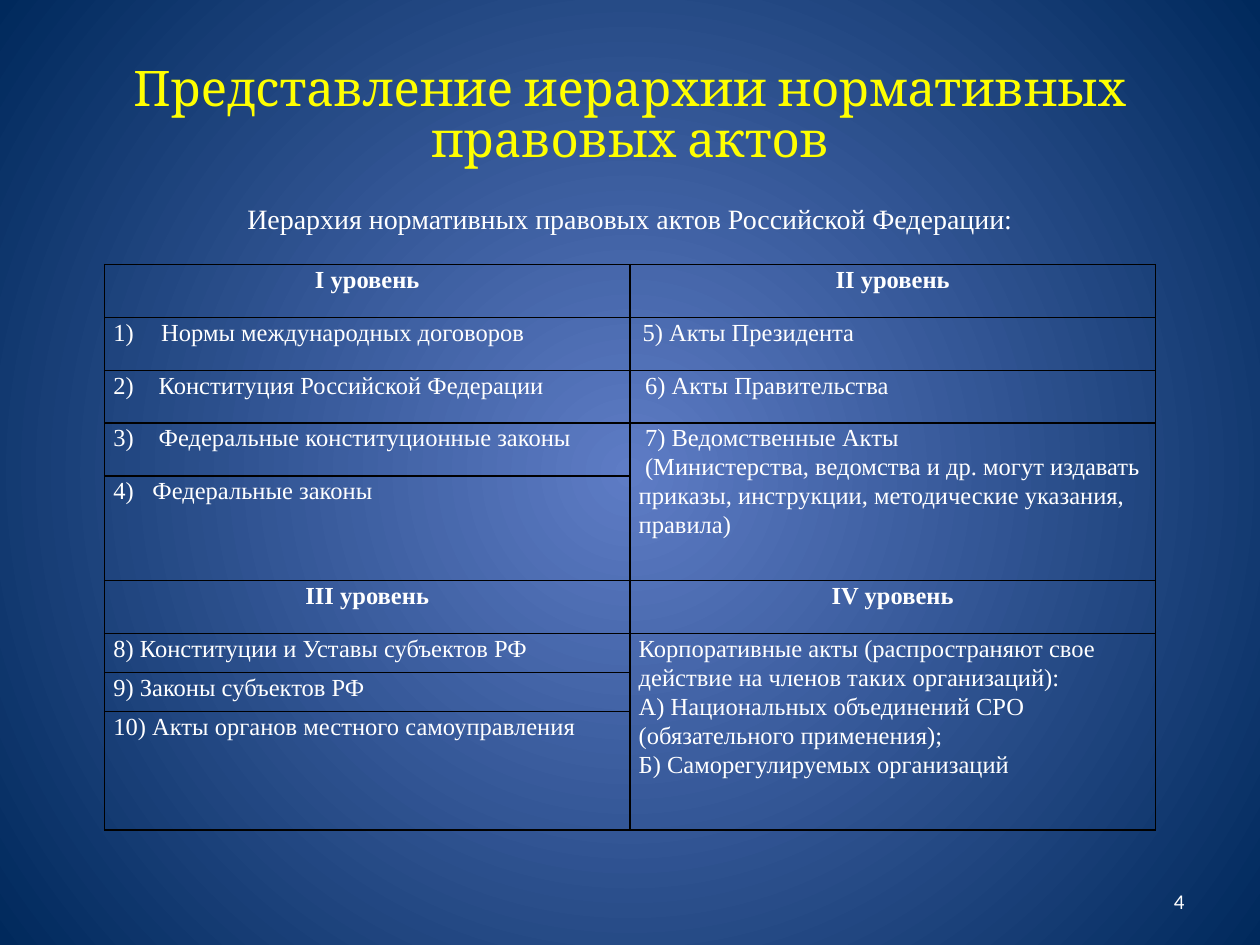
from lxml import etree
from pptx import Presentation, util as u
from pptx.dml.color import RGBColor
from pptx.enum import text
from pptx.oxml import parse_xml
from pptx.oxml.ns import nsdecls, qn

WIDTH, HEIGHT = 10, 7.5
SERIF = "Times New Roman"
WHITE = "FFFFFF"
LEFT, CENTER, RIGHT = text.PP_ALIGN.LEFT, text.PP_ALIGN.CENTER, text.PP_ALIGN.RIGHT

ROW_HEIGHTS = [0.42] * 4 + [0.83, 0.42, 0.31, 0.31, 0.94]
HEADINGS = {(0, 0): "I уровень", (0, 1): "II уровень",
            (5, 0): "III уровень", (5, 1): "IV уровень"}
# (row, column): paragraphs as (wording, left margin, first-line indent)
ACTS = {
    (1, 0): [("Нормы международных договоров", 0.38, -0.38)],
    (2, 0): [("2)\tКонституция Российской Федерации", 0.36, -0.36)],
    (3, 0): [("3)\tФедеральные конституционные законы", 0.36, -0.36)],
    (4, 0): [("4)\tФедеральные законы", 0.31, -0.31)],
    (6, 0): [("8) Конституции и Уставы субъектов РФ", 0, 0)],
    (7, 0): [("9) Законы субъектов РФ", 0, 0)],
    (8, 0): [("10) Акты органов местного самоуправления", 0, 0)],
    (1, 1): [("5) Акты Президента", 0.03, 0)],
    (2, 1): [("6) Акты Правительства", 0, 0.05)],
    (3, 1): [("7) Ведомственные Акты", 0, 0.05),
             ("(Министерства, ведомства и др. могут издавать приказы, "
              "инструкции, методические указания, правила)", 0, 0.05)],
    (6, 1): [("Корпоративные акты (распространяют свое действие на членов "
              "таких организаций):", 0, 0),
             ("А) Национальных объединений СРО (обязательного применения);", 0, 0),
             ("Б) Саморегулируемых организаций", 0, 0)],
}
MERGES = [(3, 4), (6, 8)]  # first and last rows joined in the right column


def rgb(value):
    return RGBColor.from_string(value)


def style(paragraph, size, font=SERIF, color=WHITE, align=LEFT, bold=False):
    paragraph.alignment = align
    paragraph.font.size = u.Pt(size)
    paragraph.font.name = font
    paragraph.font.color.rgb = rgb(color)
    paragraph.font.bold = bold


def paint_background(slide, center, edge):
    """Fill the slide with a gradient that spreads from its middle."""
    fill = slide.background.fill
    fill.gradient()
    for stop, color in zip(fill.gradient_stops, (center, edge)):
        stop.color.rgb = rgb(color)
    gradient = slide.element.find(".//" + qn("a:gradFill"))
    gradient.replace(gradient.find(qn("a:lin")), parse_xml(
        f'<a:path {nsdecls("a")} path="circle">'
        '<a:fillToRect l="50000" t="50000" r="50000" b="50000"/></a:path>'))


def add_title(slide, wording):
    title = slide.shapes.title
    title.left, title.top = u.Inches(0.05 * WIDTH), u.Inches(0.04 * HEIGHT)
    title.width, title.height = u.Inches(0.9 * WIDTH), u.Inches(1.25)
    frame = title.text_frame
    frame.text = wording
    frame.auto_size = text.MSO_AUTO_SIZE.NONE
    frame.vertical_anchor = text.MSO_ANCHOR.MIDDLE
    style(frame.paragraphs[0], 28, "Cambria", "FFFF00", CENTER)
    frame.paragraphs[0].line_spacing = 0.87


def add_label(slide, wording, box, anchor=text.MSO_ANCHOR.TOP, **look):
    frame = slide.shapes.add_textbox(*map(u.Inches, box)).text_frame
    frame.word_wrap = True
    frame.vertical_anchor = anchor
    frame.text = wording
    style(frame.paragraphs[0], **look)


def add_borders(cell):
    properties = cell._tc.get_or_add_tcPr()
    for position, side in enumerate(("lnL", "lnR", "lnT", "lnB")):
        properties.insert(position, parse_xml(
            f'<a:{side} {nsdecls("a")} w="12700"><a:solidFill>'
            f'<a:srgbClr val="000000"/></a:solidFill></a:{side}>'))


def fill_cell(cell, paragraphs, **look):
    frame = cell.text_frame
    for number, (wording, margin, indent) in enumerate(paragraphs):
        paragraph = frame.add_paragraph() if number else frame.paragraphs[0]
        paragraph.text = wording
        paragraph.line_spacing = 1.07
        style(paragraph, 14, **look)
        properties = paragraph._p.get_or_add_pPr()
        properties.set("marL", str(u.Inches(margin)))
        properties.set("indent", str(u.Inches(indent)))


def number_paragraph(paragraph):
    """Give the paragraph an automatic number such as 1)."""
    bullet = etree.Element(qn("a:buAutoNum"), type="arabicParenR")
    properties = paragraph._p.get_or_add_pPr()
    following = properties.find(qn("a:defRPr"))
    if following is None:
        properties.append(bullet)
    else:
        following.addprevious(bullet)


def add_hierarchy(slide):
    left, column_width = 0.83, 4.17
    table = slide.shapes.add_table(
        len(ROW_HEIGHTS), 2, u.Inches(left), u.Inches(2.1),
        u.Inches(2 * column_width), u.Inches(sum(ROW_HEIGHTS))).table
    table.first_row = table.horz_banding = False
    for column in table.columns:
        column.width = u.Inches(column_width)
    for row, height in zip(table.rows, ROW_HEIGHTS):
        row.height = u.Inches(height)
    for cell in table.iter_cells():
        cell.margin_left = cell.margin_right = u.Inches(0.07)
        cell.margin_top = cell.margin_bottom = 0
        cell.fill.background()
        add_borders(cell)
    for first, last in MERGES:
        table.cell(first, 1).merge(table.cell(last, 1))
    for place, heading in HEADINGS.items():
        fill_cell(table.cell(*place), [(heading, 0, 0)], align=CENTER, bold=True)
    for place, paragraphs in ACTS.items():
        fill_cell(table.cell(*place), paragraphs)
    number_paragraph(table.cell(1, 0).text_frame.paragraphs[0])


def main():
    deck = Presentation()
    deck.slide_width, deck.slide_height = u.Inches(WIDTH), u.Inches(HEIGHT)
    slide = deck.slides.add_slide(deck.slide_layouts.get_by_name("Title Only"))
    paint_background(slide, "5E7CC5", "00295C")
    add_title(slide, "Представление иерархии нормативных правовых актов")
    add_label(slide, "Иерархия нормативных правовых актов Российской Федерации:",
              (0.05 * WIDTH, 1.55, 0.9 * WIDTH, 0.45), size=16, align=CENTER)
    add_hierarchy(slide)
    add_label(slide, "4", (7.17, 6.95, 2.33, 0.4), text.MSO_ANCHOR.MIDDLE,
              size=12, font="Calibri", align=RIGHT)
    deck.save("out.pptx")


if __name__ == "__main__":
    main()
